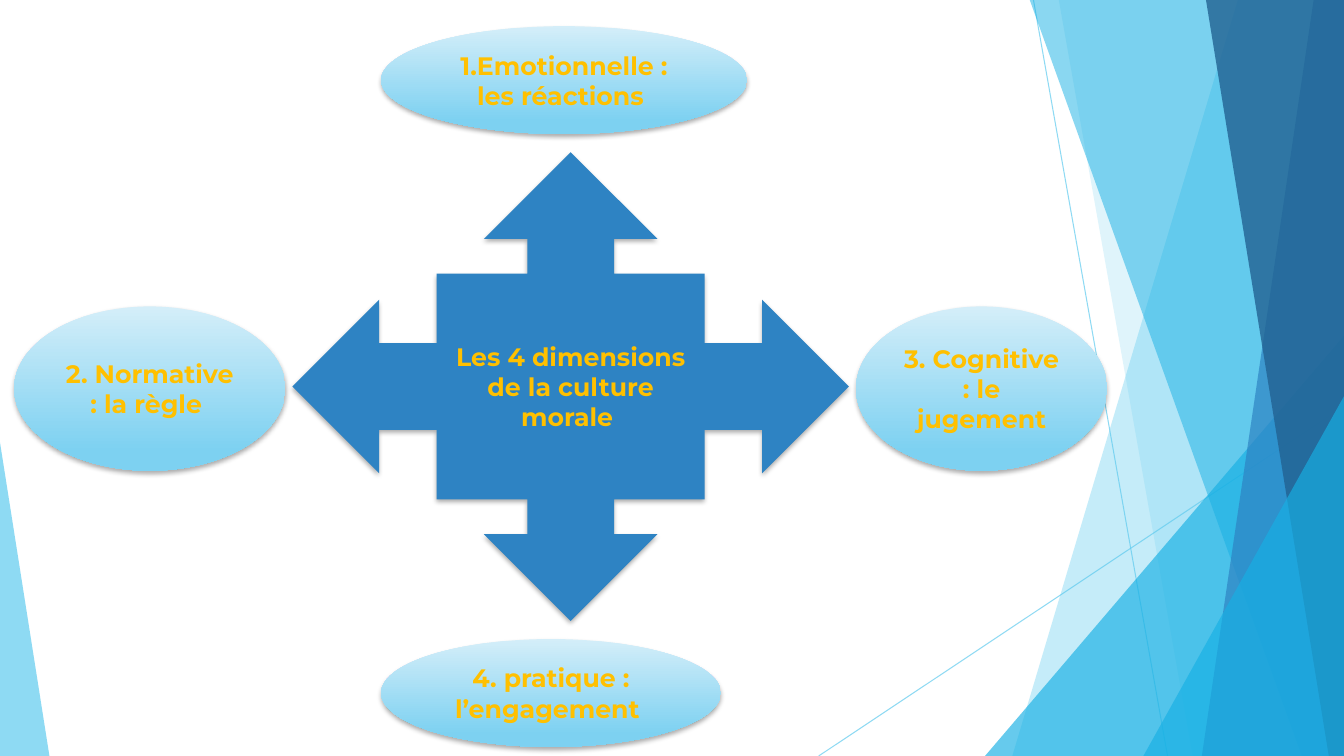
from lxml.etree import SubElement
from pptx import Presentation
from pptx.dml.color import RGBColor
from pptx.enum.shapes import MSO_CONNECTOR, MSO_SHAPE
from pptx.enum.text import MSO_ANCHOR, PP_ALIGN
from pptx.oxml.ns import qn
from pptx.util import Inches, Pt

COLORS = {
    "sky": "5FCBEF",
    "cyan": "17B0E4",
    "blue": "2E83C3",
    "navy": "226292",
    "pale": "D4EEF9",
    "light": "7DD1F1",
    "gold": "FFC000",
    "black": "000000",
}
WIDTH, HEIGHT, TOP = 13.33, 7.5, -0.01


class SlideBuilder:
    font_name = "Montserrat"
    font_size = Pt(18)

    def __init__(self, slide):
        self.slide = slide
        self.shapes = slide.shapes

    def rgb(self, name):
        return RGBColor.from_string(COLORS[name])

    def solid(self, fill, color, alpha=100):
        fill.solid()
        fill.fore_color.rgb = self.rgb(color)
        if alpha < 100:
            clr = next(fill._xPr.iter(qn("a:srgbClr")))
            SubElement(clr, qn("a:alpha"), val=str(alpha * 1000))

    def line(self, x1, y1, x2, y2):
        cn = self.shapes.add_connector(
            MSO_CONNECTOR.STRAIGHT, Inches(x1), Inches(y1), Inches(x2), Inches(y2))
        cn.line.width = Pt(0.75)
        self.solid(cn.line.fill, "sky", 70)
        SubElement(cn._element.spPr, qn("a:effectLst"))

    def plain(self, sp, color, alpha=100):
        self.solid(sp.fill, color, alpha)
        sp.line.fill.background()
        sp.shadow.inherit = False

    def band(self, top_left, bottom_left, color, alpha):
        fb = self.shapes.build_freeform(Inches(top_left), Inches(TOP))
        corners = [(WIDTH, TOP), (WIDTH, HEIGHT), (bottom_left, HEIGHT)]
        fb.add_line_segments([(Inches(x), Inches(y)) for x, y in corners], close=True)
        self.plain(fb.convert_to_shape(), color, alpha)

    def shape(self, kind, x, y, w, h):
        return self.shapes.add_shape(kind, Inches(x), Inches(y), Inches(w), Inches(h))

    def triangle(self, x, y, w, apex, color, alpha):
        sp = self.shape(MSO_SHAPE.ISOSCELES_TRIANGLE, x, y, w, HEIGHT - y)
        sp.adjustments[0] = apex
        self.plain(sp, color, alpha)

    def shadow(self, sp):
        sp.shadow.inherit = False
        effects = sp._element.spPr.find(qn("a:effectLst"))
        outer = SubElement(effects, qn("a:outerShdw"), blurRad=str(Pt(3.5)),
                           dist=str(Pt(2.2)), dir="5400000", algn="ctr", rotWithShape="0")
        clr = SubElement(outer, qn("a:srgbClr"), val=COLORS["black"])
        SubElement(clr, qn("a:alpha"), val="32000")

    def text(self, sp, text):
        tf = sp.text_frame
        tf.word_wrap = True
        tf.vertical_anchor = MSO_ANCHOR.MIDDLE
        p = tf.paragraphs[0]
        p.text = text
        p.alignment = PP_ALIGN.CENTER
        p.font.name = self.font_name
        p.font.size = self.font_size
        p.font.bold = True
        p.font.color.rgb = self.rgb("gold")

    def callout(self, x, y, w, h, text):
        sp = self.shape(MSO_SHAPE.QUAD_ARROW_CALLOUT, x, y, w, h)
        self.plain(sp, "blue")
        self.shadow(sp)
        self.text(sp, text)

    def ellipse(self, x, y, w, h, text):
        sp = self.shape(MSO_SHAPE.OVAL, x, y, w, h)
        sp.fill.gradient()
        sp.fill.gradient_angle = 270
        for stop, (pos, color) in zip(sp.fill.gradient_stops, [(0, "pale"), (0.88, "light")]):
            stop.position = pos
            stop.color.rgb = self.rgb(color)
        sp.line.fill.background()
        self.shadow(sp)
        self.text(sp, text)


def main():
    prs = Presentation()
    prs.slide_width, prs.slide_height = Inches(WIDTH), Inches(HEIGHT)
    sb = SlideBuilder(prs.slides.add_slide(prs.slide_layouts[6]))

    sb.line(10.25, 0, 11.58, HEIGHT)
    sb.line(WIDTH, 4.03, 8.12, HEIGHT)
    sb.band(12.28, 10.04, "sky", 36)
    sb.band(10.5, 11.83, "sky", 20)
    sb.triangle(9.77, 3.33, 3.56, 1, "cyan", 66)
    sb.band(10.21, 12.91, "cyan", 50)
    sb.band(13.03, 11.92, "blue", 70)
    sb.band(11.96, 13.18, "navy", 80)
    sb.triangle(11.34, 3.93, 1.99, 1, "cyan", 66)
    sb.triangle(0, 4.39, 0.49, 0, "sky", 70)

    sb.callout(2.9, 1.51, 5.52, 4.65, "Les 4 dimensions de la culture morale ")
    dimensions = [
        (3.78, 0.26, 3.63, 1.07, "1.Emotionnelle : les réactions "),
        (0.14, 3.04, 2.69, 1.63, "2. Normative : la règle "),
        (3.78, 6.34, 3.37, 1.07, "4. pratique : l’engagement "),
        (8.49, 3.04, 2.49, 1.63, "3. Cognitive : le jugement"),
    ]
    for dimension in dimensions:
        sb.ellipse(*dimension)

    prs.save("out.pptx")


if __name__ == "__main__":
    main()
